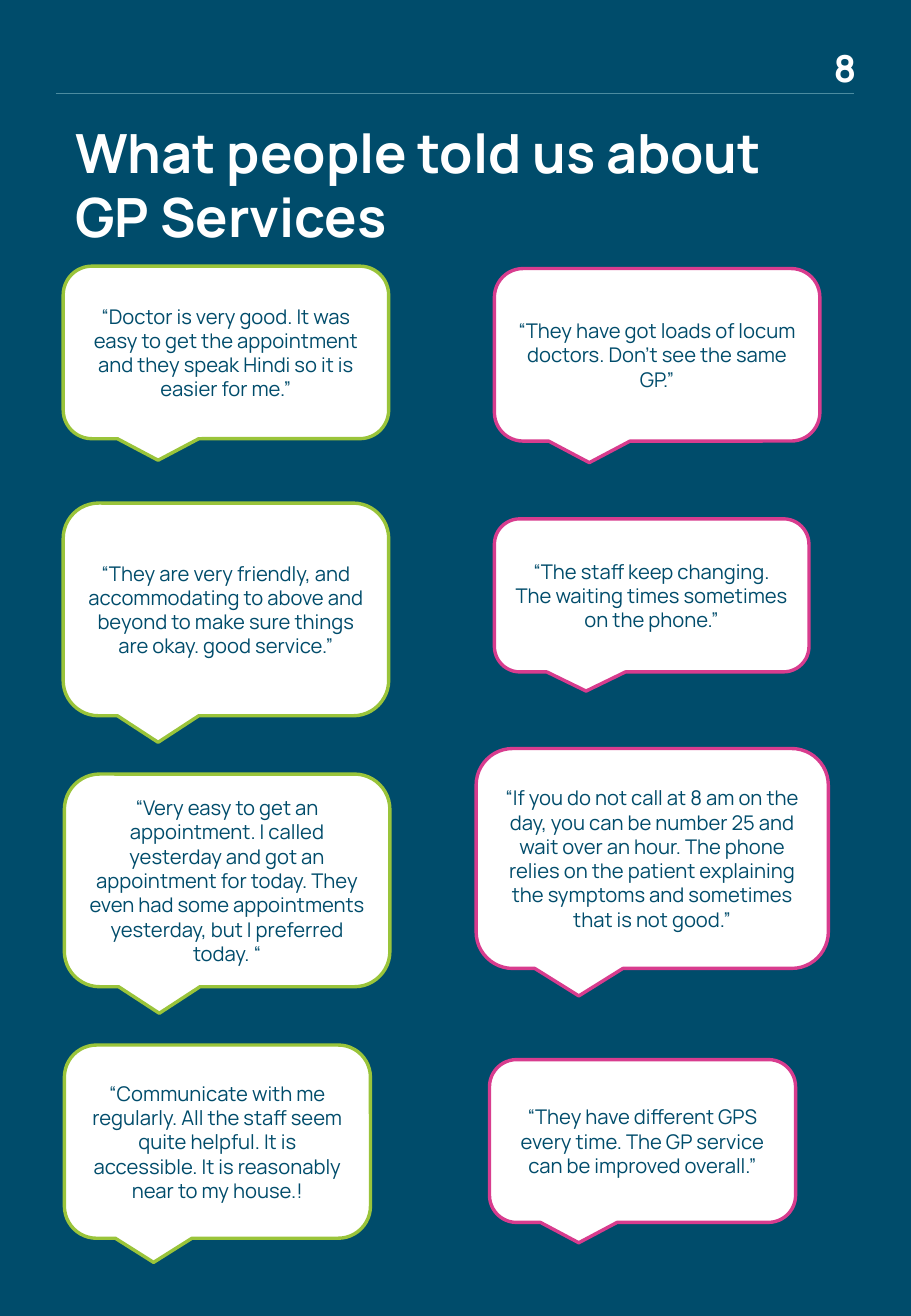
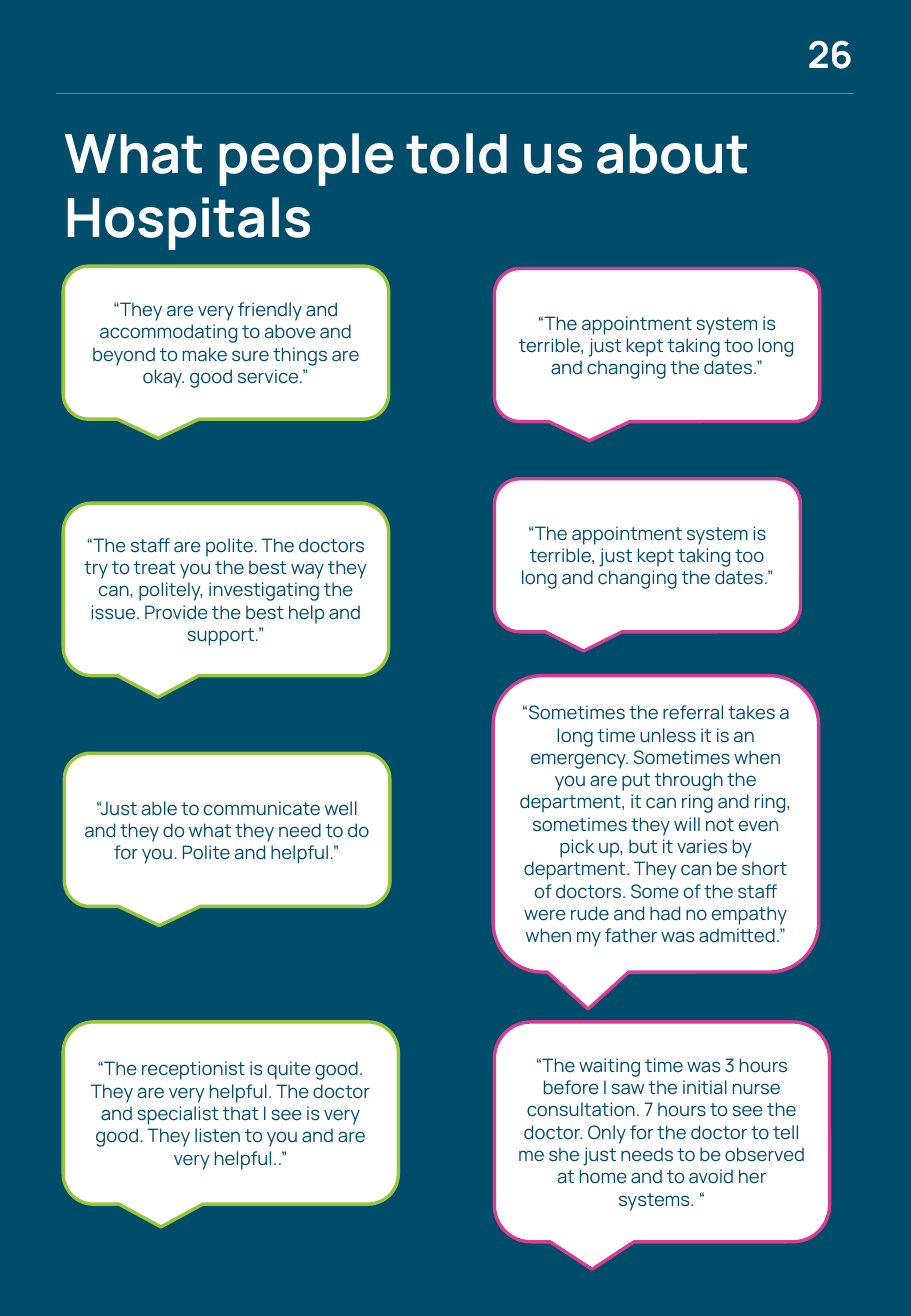
from dataclasses import dataclass

from lxml.etree import SubElement
from pptx import Presentation
from pptx.dml.color import RGBColor
from pptx.enum.shapes import MSO_CONNECTOR, MSO_SHAPE
from pptx.enum.text import MSO_ANCHOR, MSO_AUTO_SIZE, PP_ALIGN
from pptx.oxml.ns import qn
from pptx.util import Inches, Pt


@dataclass(frozen=True)
class Theme:
    font: str = "Manrope"
    navy: str = "004C6B"
    white: str = "FFFFFF"
    rule: str = "4C8CA0"
    praise: str = "9AC43A"
    concern: str = "D83C8E"
    title_size: int = 32
    number_size: int = 22


@dataclass(frozen=True)
class Quote:
    top: float
    height: float
    text: str
    width: float = 2.68
    shift: float = 0  # offset from the left edge of the column


THEME = Theme()
WIDTH, HEIGHT = 7.5, 10.83
TITLE_ONLY = 5
PRAISE_LEFT, CONCERN_LEFT = 0.52, 4.07
RULE_LEFT, RULE_RIGHT, RULE_TOP = 0.46, 7.03, 0.77

# Quotes about GP services
GP_PRAISE = [
    Quote(2.19, 1.42, "“Doctor is very good. It was easy to get the appointment and "
          "they speak Hindi so it is easier for me.”"),
    Quote(4.14, 1.75, "“They are very friendly, and accommodating to above and beyond "
          "to make sure things are okay. good service.”"),
    Quote(6.37, 1.75, "“Very easy to get an appointment. I called yesterday and got an "
          "appointment for today. They even had some appointments yesterday, but I "
          "preferred today. “", shift=0.01),
    Quote(8.6, 1.59, "“Communicate with me regularly. All the staff seem quite helpful. "
          "It is accessible. It is reasonably near to my house.!", 2.52, 0.01),
]
GP_CONCERNS = [
    Quote(2.21, 1.42, "“They have got loads of locum doctors. Don't see the same GP.”"),
    Quote(4.27, 1.26, "“The staff keep changing. The waiting times sometimes on the "
          "phone.”", 2.59),
    Quote(6.16, 1.81, "“If you do not call at 8 am on the day, you can be number 25 and "
          "wait over an hour. The phone relies on the patient explaining the symptoms "
          "and sometimes that is not good.”", 2.9, -0.15),
    Quote(8.72, 1.34, "“They have different GPS every time. The GP service can be "
          "improved overall.”", 2.52, -0.04),
]

# Quotes about hospitals
APPOINTMENTS = ("“The appointment system is terrible, just kept taking too long and "
                "changing the dates.”")
HOSPITAL_PRAISE = [
    Quote(2.19, 1.26, "“They are very friendly and accommodating to above and beyond to "
          "make sure things are okay. good service.”"),
    Quote(4.14, 1.42, "“The staff are polite. The doctors try to treat you the best way "
          "they can, politely, investigating the issue. Provide the best help and "
          "support.”"),
    Quote(6.2, 1.26, "“Just able to communicate well and they do what they need to do "
          "for you. Polite and helpful.”", shift=0.01),
    Quote(8.41, 1.5, "“The receptionist is quite good. They are very helpful. The doctor "
          "and specialist that I see is very good. They listen to you and are very "
          "helpful..”", 2.76),
]
HOSPITAL_CONCERNS = [
    Quote(2.21, 1.26, APPOINTMENTS),
    Quote(3.94, 1.26, APPOINTMENTS, 2.52),
    Quote(5.56, 2.44, "“Sometimes the referral takes a long time unless it is an "
          "emergency. Sometimes when you are put through the department, it can ring "
          "and ring, sometimes they will not even pick up, but it varies by department. "
          "They can be short of doctors. Some of the staff were rude and had no empathy "
          "when my father was admitted.”", shift=-0.01),
    Quote(8.41, 1.81, "“The waiting time was 3 hours before I saw the initial nurse "
          "consultation. 7 hours to see the doctor. Only for the doctor to tell me she "
          "just needs to be observed at home and to avoid her systems. “", 2.76),
]


def color(value):
    return RGBColor.from_string(value)


def write(box, text, *, size, ink=THEME.white, bold=False, align=PP_ALIGN.LEFT,
          anchor=MSO_ANCHOR.TOP, inset=None):
    """Fill a shape's text frame with one formatted paragraph."""
    frame = box.text_frame
    frame.word_wrap = True
    frame.auto_size = MSO_AUTO_SIZE.NONE
    frame.vertical_anchor = anchor
    if inset is not None:
        frame.margin_left = frame.margin_right = Inches(inset)
        frame.margin_top = frame.margin_bottom = Inches(inset)
    para = frame.paragraphs[0]
    para.alignment = align
    span = para.add_run()
    span.text = text
    span.font.name = THEME.font
    span.font.size = Pt(size)
    span.font.bold = bold
    span.font.color.rgb = color(ink)


def add_rule(page):
    rule = page.shapes.add_connector(
        MSO_CONNECTOR.STRAIGHT, Inches(RULE_LEFT), Inches(RULE_TOP),
        Inches(RULE_RIGHT), Inches(RULE_TOP))
    rule.line.color.rgb = color(THEME.rule)
    rule.line.width = Pt(0.75)
    SubElement(rule._element.spPr, qn("a:effectLst"))


def add_page_number(page, number, left, top):
    box = page.shapes.add_textbox(Inches(left), Inches(top), Inches(0.64), Inches(0.39))
    write(box, number, size=THEME.number_size, bold=True, align=PP_ALIGN.RIGHT, inset=0)


def set_title(page, text, left):
    title = page.shapes.title
    title.left, title.top = Inches(left), Inches(0.93)
    title.width, title.height = Inches(6.52), Inches(1.18)
    write(title, text, size=THEME.title_size, bold=True)


def add_bubble(page, quote, column_left, outline, size):
    bubble = page.shapes.add_shape(
        MSO_SHAPE.ROUNDED_RECTANGULAR_CALLOUT, Inches(column_left + quote.shift),
        Inches(quote.top), Inches(quote.width), Inches(quote.height))
    bubble.shadow.inherit = False
    bubble.fill.solid()
    bubble.fill.fore_color.rgb = color(THEME.white)
    bubble.line.color.rgb = color(outline)
    bubble.line.width = Pt(2)
    write(bubble, quote.text, size=size, ink=THEME.navy, align=PP_ALIGN.CENTER,
          anchor=MSO_ANCHOR.MIDDLE)


def add_quote_page(deck, title, title_left, number, number_at, praise, concerns, size):
    page = deck.slides.add_slide(deck.slide_layouts[TITLE_ONLY])
    add_rule(page)
    add_page_number(page, number, *number_at)
    set_title(page, title, title_left)
    # Praise on the left, concerns on the right
    for good, bad in zip(praise, concerns):
        add_bubble(page, good, PRAISE_LEFT, THEME.praise, size)
        add_bubble(page, bad, CONCERN_LEFT, THEME.concern, size)


def main():
    deck = Presentation()
    deck.slide_width, deck.slide_height = Inches(WIDTH), Inches(HEIGHT)
    # Shared background
    backdrop = deck.slide_master.background.fill
    backdrop.solid()
    backdrop.fore_color.rgb = color(THEME.navy)

    add_quote_page(deck, "What people told us about GP Services", 0.52, "8",
                   (6.41, 0.37), GP_PRAISE, GP_CONCERNS, size=12)
    add_quote_page(deck, "What people told us about Hospitals", 0.43, "26",
                   (6.38, 0.26), HOSPITAL_PRAISE, HOSPITAL_CONCERNS, size=11)
    deck.save("out.pptx")


if __name__ == "__main__":
    main()
